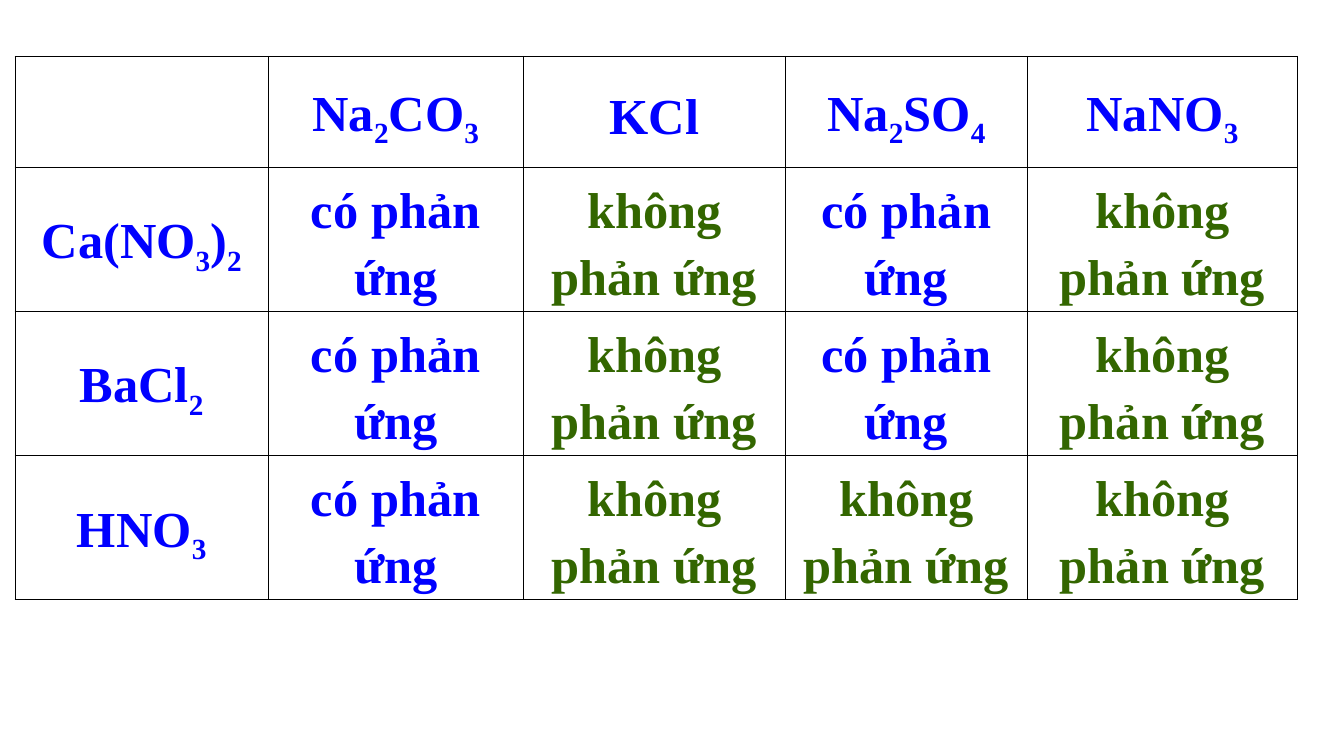
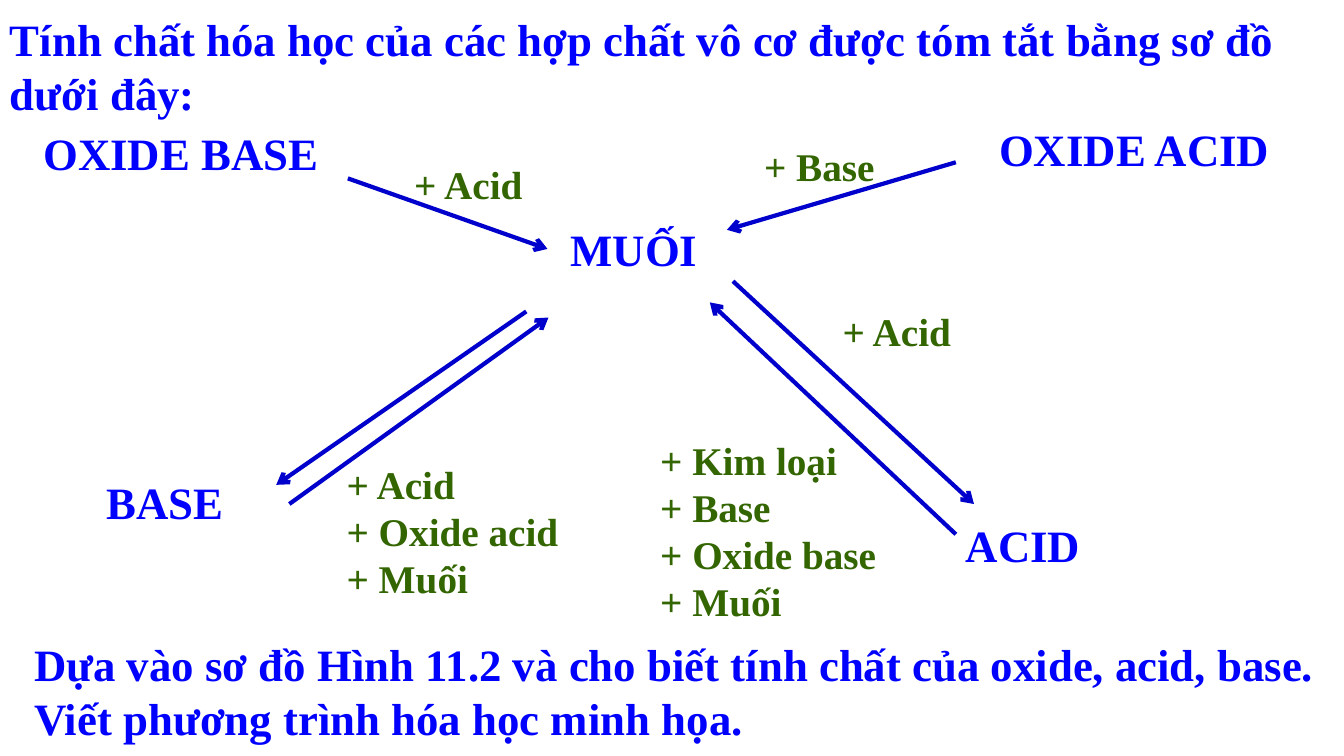
from dataclasses import dataclass
from itertools import groupby

from lxml.etree import SubElement
from pptx import Presentation
from pptx.dml.color import RGBColor
from pptx.enum.shapes import MSO_CONNECTOR
from pptx.enum.text import MSO_ANCHOR, MSO_AUTO_SIZE, PP_ALIGN
from pptx.oxml.ns import qn
from pptx.util import Inches, Pt


@dataclass(frozen=True)
class Theme:
    font: str = "Times New Roman"
    blue: RGBColor = RGBColor(0x00, 0x00, 0xFF)
    green: RGBColor = RGBColor(0x33, 0x66, 0x00)
    arrow: RGBColor = RGBColor(0x00, 0x00, 0xCC)
    white: RGBColor = RGBColor(0xFF, 0xFF, 0xFF)
    border: str = "000000"
    table_size: Pt = Pt(36)
    heading_size: Pt = Pt(32)
    reagent_size: Pt = Pt(28)


THEME = Theme()


def style_paragraph(para, size, color):
    para.font.name = THEME.font
    para.font.size = size
    para.font.bold = True
    para.font.color.rgb = color


def add_text(page, lines, left, top, width, height, size, color):
    box = page.shapes.add_textbox(Inches(left), Inches(top), Inches(width), Inches(height))
    frame = box.text_frame
    frame.word_wrap = True
    frame.auto_size = MSO_AUTO_SIZE.SHAPE_TO_FIT_TEXT
    frame.text = "\n".join(lines)
    for para in frame.paragraphs:
        style_paragraph(para, size, color)


deck = Presentation()
deck.slide_width = Inches(13.33)
deck.slide_height = Inches(7.5)
blank = deck.slide_layouts[6]

# Slide 1: which salts react with which solutions
YES, NO = "có phản ứng", "không phản ứng"
REACTIONS = [
    ["", "Na2CO3", "KCl", "Na2SO4", "NaNO3"],
    ["Ca(NO3)2", YES, NO, YES, NO],
    ["BaCl2", YES, NO, YES, NO],
    ["HNO3", YES, NO, NO, NO],
]
COLUMN_WIDTHS = [2.51, 2.53, 2.6, 2.4, 2.68]
ROW_HEIGHTS = [1.1, 1.43, 1.43, 1.43]

page = deck.slides.add_slide(blank)
table = page.shapes.add_table(
    len(ROW_HEIGHTS), len(COLUMN_WIDTHS), Inches(0.15), Inches(0.56),
    Inches(sum(COLUMN_WIDTHS)), Inches(sum(ROW_HEIGHTS))).table
table.first_row = False
table.horz_banding = False
for column, width in zip(table.columns, COLUMN_WIDTHS):
    column.width = Inches(width)
for row, height, texts in zip(table.rows, ROW_HEIGHTS, REACTIONS):
    row.height = Inches(height)
    for cell, text in zip(row.cells, texts):
        cell.vertical_anchor = MSO_ANCHOR.MIDDLE
        para = cell.text_frame.paragraphs[0]
        para.alignment = PP_ALIGN.CENTER
        para.line_spacing = 1.2
        para.space_after = Pt(0.6)
        style_paragraph(para, THEME.table_size, THEME.green if text == NO else THEME.blue)
        for is_subscript, letters in groupby(text, str.isdigit):
            span = para.add_run()
            span.text = "".join(letters)
            if is_subscript:
                span._r.get_or_add_rPr().set("baseline", "-25000")
        # Borders precede the fill in the cell properties
        properties = cell._tc.get_or_add_tcPr()
        for side in ("a:lnL", "a:lnR", "a:lnT", "a:lnB"):
            line = SubElement(properties, qn(side), w=str(Pt(1)))
            SubElement(SubElement(line, qn("a:solidFill")), qn("a:srgbClr"), val=THEME.border)
        cell.fill.solid()
        cell.fill.fore_color.rgb = THEME.white

# Slide 2: how salts relate to oxides, acids and bases
HEADINGS = [
    ("Tính chất hóa học của các hợp chất vô cơ được tóm tắt bằng sơ đồ dưới đây:",
     0, 0.07, 13.09, 1.18),
    ("MUỐI", 5.56, 2.15, 1.77, 0.64),
    ("OXIDE BASE", 0.33, 1.2, 3.12, 0.64),
    ("BASE", 0.96, 4.66, 1.77, 0.64),
    ("ACID", 9.48, 5.09, 1.77, 0.64),
    ("OXIDE ACID", 9.81, 1.16, 3.29, 0.64),
    ("Dựa vào sơ đồ Hình 11.2 và cho biết tính chất của oxide, acid, base. "
     "Viết phương trình hóa học minh họa.", 0.24, 6.27, 13.09, 1.18),
]
ARROWS = [
    (3.45, 1.77, 5.43, 2.47),
    (2.87, 5, 5.44, 3.15),
    (5.22, 3.09, 2.74, 4.81),
    (7.27, 2.79, 9.66, 5),
    (9.48, 5.3, 7.04, 3),
    (9.48, 1.61, 7.21, 2.28),
]
REAGENTS = [
    (["+ Acid", "+ Oxide acid", "+ Muối"], 3.34, 4.52, 3.04, 1.51),
    (["+ Kim loại", "+ Base", "+ Oxide base", "+ Muối"], 6.45, 4.28, 3.04, 1.99),
    (["+ Acid"], 8.26, 3, 1.55, 0.57),
    (["+ Acid"], 4.01, 1.54, 1.55, 0.57),
    (["+ Base"], 7.48, 1.36, 1.55, 0.57),
]

page = deck.slides.add_slide(blank)
for text, *place in HEADINGS:
    add_text(page, [text], *place, THEME.heading_size, THEME.blue)
for ends in ARROWS:
    arrow = page.shapes.add_connector(MSO_CONNECTOR.STRAIGHT, *map(Inches, ends))
    arrow.line.color.rgb = THEME.arrow
    arrow.line.width = Pt(3)
    SubElement(arrow.line._get_or_add_ln(), qn("a:tailEnd"), type="arrow")
    SubElement(arrow._element.spPr, qn("a:effectLst"))
for lines, *place in REAGENTS:
    add_text(page, lines, *place, THEME.reagent_size, THEME.green)

deck.save("out.pptx")
